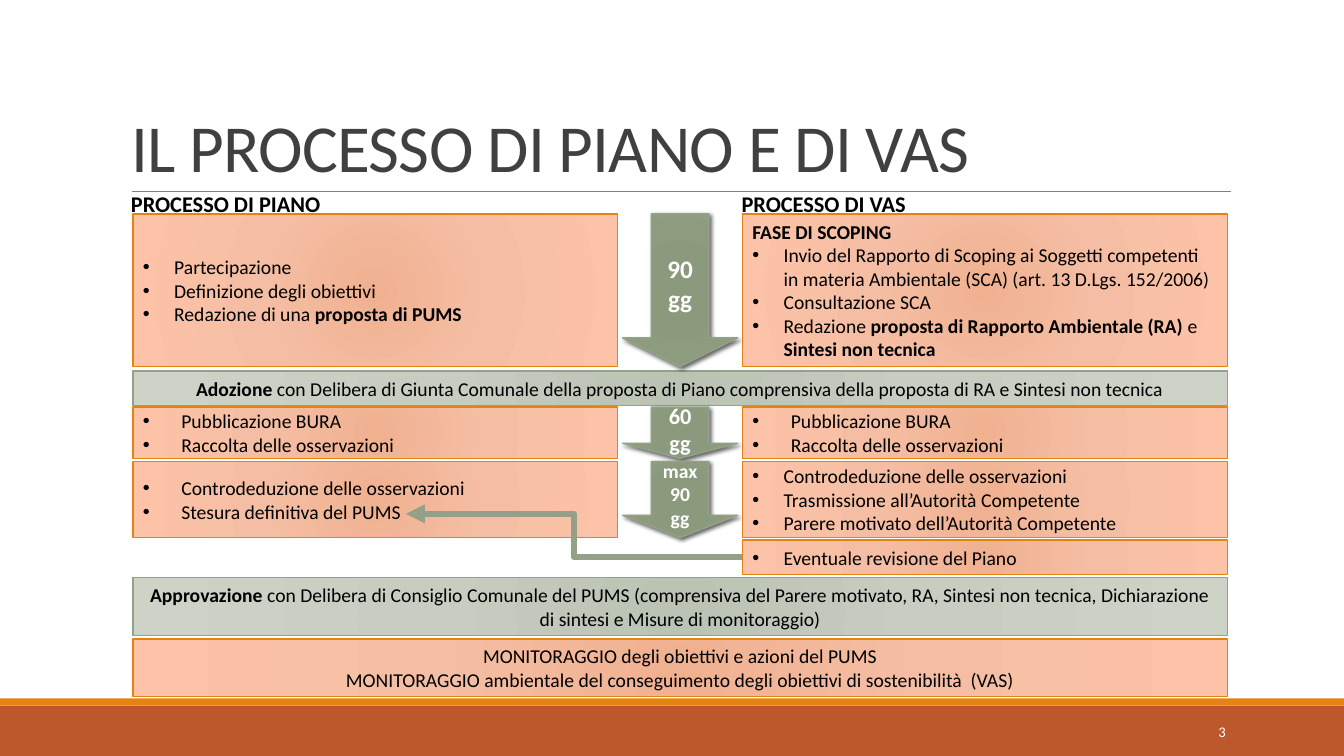
import dataclasses

import lxml.etree
import pptx
import pptx.dml.color
import pptx.enum.shapes
import pptx.enum.text
import pptx.oxml.ns
import pptx.util

Cm = pptx.util.Cm
Pt = pptx.util.Pt
ALIGN = pptx.enum.text.PP_ALIGN
ANCHOR = pptx.enum.text.MSO_ANCHOR
SHAPE = pptx.enum.shapes.MSO_SHAPE
qn = pptx.oxml.ns.qn


@dataclasses.dataclass(frozen=True)
class Theme:
    font: str = "Calibri"
    title_size: float = 48
    heading_size: float = 16
    body_size: float = 14
    number_size: float = 10.5
    title: str = "404040"
    text: str = "000000"
    light: str = "FFFFFF"
    rule: str = "808080"
    footer: str = "BD582C"
    orange: str = "E48312"
    green: str = "94A088"
    orange_stops: tuple = ((0, "F0B191"), (45, "F5BEA4"), (100, "FDC3A8"))
    green_stops: tuple = ((0, "BBC3B5"), (45, "C7CDC1"), (100, "CDD4C7"))
    arrow_stops: tuple = ((0, "8A987B"), (34, "8B997D"), (70, "8D9C7E"), (100, "94A187"))


THEME = Theme()

# All lengths are in centimetres; boxes are (left, top, width, height).
LEFT, WIDTH, COLUMN = 3.35, 27.58, 12.22
RIGHT = LEFT + WIDTH - COLUMN
ARROW_WIDTH = 2.9
SMALL_INDENT, LARGE_INDENT = 0.79, 0.97

# Each phase: top, height, arrow label, label size, arrow head, (indent, lines) per column.
PHASES = [
    (5.39, 3.85, "90\ngg", 18, 0.25,
     (SMALL_INDENT, ["• Partecipazione", "• Definizione degli obiettivi",
                     "• Redazione di una **proposta di PUMS**"]),
     (SMALL_INDENT, ["**FASE DI SCOPING**",
                     "• Invio del Rapporto di Scoping ai Soggetti competenti in materia "
                     "Ambientale (SCA) (art. 13 D.Lgs. 152/2006)",
                     "• Consultazione SCA",
                     "• Redazione **proposta di Rapporto Ambientale (RA) **e "
                     "**Sintesi non tecnica**"])),
    (10.26, 1.29, "60\ngg", 16, 0.294,
     (LARGE_INDENT, ["• Pubblicazione BURA", "• Raccolta delle osservazioni"]),
     (LARGE_INDENT, ["• Pubblicazione BURA", "• Raccolta delle osservazioni"])),
    (11.63, 1.92, "max\v90\ngg", 14, 0.294,
     (LARGE_INDENT, ["• Controdeduzione delle osservazioni", "• Stesura definitiva del PUMS"]),
     (SMALL_INDENT, ["• Controdeduzione delle osservazioni",
                     "• Trasmissione all’Autorità Competente",
                     "• Parere motivato dell’Autorità Competente"])),
]


def rgb(value):
    return pptx.dml.color.RGBColor.from_string(value)


def add_node(parent, tag, **attributes):
    node = lxml.etree.SubElement(parent, qn(tag))
    for name, value in attributes.items():
        node.set(name, str(value))
    return node


def style(paragraph, size, color, bold=None, align=ALIGN.LEFT):
    paragraph.alignment = align
    font = paragraph.font
    font.name, font.size, font.bold = THEME.font, Pt(size), bold
    font.color.rgb = rgb(color)


def fill_radial(shape, stops):
    shape.fill.gradient()
    gradient = shape._element.spPr.find(qn("a:gradFill"))
    for child in list(gradient):
        gradient.remove(child)
    stop_list = add_node(gradient, "a:gsLst")
    for position, color in stops:
        stop = add_node(stop_list, "a:gs", pos=position * 1000)
        add_node(stop, "a:srgbClr", val=color)
    radial = add_node(gradient, "a:path", path="circle")
    add_node(radial, "a:fillToRect", l=100000, t=100000, r=100000, b=100000)


def add_panel(slide, kind, box, stops, line):
    shape = slide.shapes.add_shape(kind, *map(Cm, box))
    shape.shadow.inherit = False
    fill_radial(shape, stops)
    shape.line.color.rgb = rgb(line)
    shape.line.width = Pt(1)
    return shape


def write_lines(frame, lines, indent, align):
    """Write lines; a leading • makes a bullet and ** toggles bold."""
    for index, line in enumerate(lines):
        paragraph = frame.paragraphs[0] if index == 0 else frame.add_paragraph()
        if line.startswith("• "):
            line = line[2:]
            properties = paragraph._p.get_or_add_pPr()
            properties.set("marL", str(Cm(indent)))
            properties.set("indent", str(-Cm(indent)))
            add_node(properties, "a:buFont", typeface="Arial")
            add_node(properties, "a:buChar", char="•")
        style(paragraph, THEME.body_size, THEME.text, align=align)
        for part, text in enumerate(line.split("**")):
            if text:
                run = paragraph.add_run()
                run.text = text
                run.font.bold = part % 2 == 1


def add_orange_box(slide, box, lines, indent=SMALL_INDENT, align=ALIGN.LEFT):
    shape = add_panel(slide, SHAPE.RECTANGLE, box, THEME.orange_stops, THEME.orange)
    shape.text_frame.vertical_anchor = ANCHOR.MIDDLE
    write_lines(shape.text_frame, lines, indent, align)


def add_green_band(slide, box, line):
    shape = add_panel(slide, SHAPE.RECTANGLE, box, THEME.green_stops, THEME.green)
    shape.text_frame.vertical_anchor = ANCHOR.MIDDLE
    write_lines(shape.text_frame, [line], 0, ALIGN.CENTER)


def add_duration_arrow(slide, box, label, size, head):
    arrow = add_panel(slide, SHAPE.DOWN_ARROW, box, THEME.arrow_stops, THEME.green)
    arrow.adjustments[0], arrow.adjustments[1] = 0.5, head
    effects = arrow._element.spPr.find(qn("a:effectLst"))
    shadow = add_node(effects, "a:outerShdw", blurRad=Pt(3), dist=Pt(2), dir=2700000)
    add_node(add_node(shadow, "a:srgbClr", val="000000"), "a:alpha", val=60000)
    arrow.text_frame.vertical_anchor = ANCHOR.MIDDLE
    arrow.text_frame.text = label
    for paragraph in arrow.text_frame.paragraphs:
        style(paragraph, size, THEME.light, True, ALIGN.CENTER)


def add_phase(slide, top, height, label, size, head, plan, assessment):
    for left, (indent, lines) in ((LEFT, plan), (RIGHT, assessment)):
        add_orange_box(slide, (left, top, COLUMN, height), lines, indent)
    arrow_left = (LEFT + COLUMN + RIGHT - ARROW_WIDTH) / 2
    add_duration_arrow(slide, (arrow_left, top, ARROW_WIDTH, height), label, size, head)


def add_line(slide, kind, start, end, color, width):
    line = slide.shapes.add_connector(kind, *map(Cm, start + end))
    line.line.color.rgb = rgb(color)
    line.line.width = Pt(width)
    add_node(line._element.spPr, "a:effectLst")
    return line


def add_label(slide, box, text, size, color, bold=None, align=ALIGN.LEFT, wrap=False):
    frame = slide.shapes.add_textbox(*map(Cm, box)).text_frame
    frame.word_wrap = wrap
    frame.vertical_anchor = ANCHOR.MIDDLE
    frame.text = text
    style(frame.paragraphs[0], size, color, bold, align)


def add_title(slide, box, text):
    title = slide.shapes.title
    title.left, title.top, title.width, title.height = map(Cm, box)
    frame = title.text_frame
    frame.text = text
    frame.auto_size = pptx.enum.text.MSO_AUTO_SIZE.NONE
    frame.vertical_anchor = ANCHOR.BOTTOM
    paragraph = frame.paragraphs[0]
    paragraph.line_spacing = 0.85
    style(paragraph, THEME.title_size, THEME.title)
    paragraph.runs[0]._r.get_or_add_rPr().set("spc", "-50")
    add_line(slide, pptx.enum.shapes.MSO_CONNECTOR.STRAIGHT,
             (3.33, 4.83), (31.01, 4.83), THEME.rule, 0.5)


def add_footer(slide, box, number):
    left, top, width, height = box
    stripe = 0.18
    for bar_top, bar_height, color in ((top + stripe, height - stripe, THEME.footer),
                                       (top, stripe, THEME.orange)):
        bar = slide.shapes.add_shape(SHAPE.RECTANGLE, *map(Cm, (left, bar_top, width, bar_height)))
        bar.shadow.inherit = False
        bar.fill.solid()
        bar.fill.fore_color.rgb = rgb(color)
        bar.line.fill.background()
    add_label(slide, (left + 27.51, top + 0.33, 3.63, 1.02), number,
              THEME.number_size, THEME.light, align=ALIGN.RIGHT, wrap=True)


def add_revision(slide, box):
    """Place the plan revision box and the arrow leading back to the plan."""
    add_orange_box(slide, box, ["• Eventuale revisione del Piano"])
    left, top, _, height = box
    arrow = add_line(slide, pptx.enum.shapes.MSO_CONNECTOR.ELBOW,
                     (left, top + height / 2), (left - 8.48, top - 0.66), THEME.green, 4.5)
    add_node(arrow.line._get_or_add_ln(), "a:tailEnd", type="triangle")


def main():
    presentation = pptx.Presentation()
    presentation.slide_width, presentation.slide_height = Cm(33.87), Cm(19.05)
    slide = presentation.slides.add_slide(presentation.slide_layouts[5])
    add_footer(slide, (0, 17.6, 33.87, 1.45), "3")
    add_title(slide, (3.05, 0.79, 27.94, 4.04), "IL PROCESSO DI PIANO E DI VAS")
    for left, width, heading in ((3.05, 5.36, "PROCESSO DI PIANO"),
                                 (18.44, 4.72, "PROCESSO DI VAS")):
        add_label(slide, (left, 4.65, width, 0.94), heading,
                  THEME.heading_size, THEME.text, True)
    add_green_band(slide, (LEFT, 9.35, WIDTH, 0.87),
                   "**Adozione** con Delibera di Giunta Comunale della proposta di Piano "
                   "comprensiva della proposta di RA e Sintesi non tecnica")
    for phase in PHASES:
        add_phase(slide, *phase)
    add_revision(slide, (RIGHT, 13.61, COLUMN, 0.87))
    add_green_band(slide, (LEFT, 14.56, WIDTH, 1.46),
                   "**Approvazione** con Delibera di Consiglio Comunale del PUMS (comprensiva "
                   "del Parere motivato, RA, Sintesi non tecnica, Dichiarazione di sintesi e "
                   "Misure di monitoraggio)")
    add_orange_box(slide, (LEFT, 16.1, WIDTH, 1.46),
                   ["MONITORAGGIO degli obiettivi e azioni del PUMS",
                    "MONITORAGGIO ambientale del conseguimento degli obiettivi di "
                    "sostenibilità  (VAS)"], align=ALIGN.CENTER)
    presentation.save("out.pptx")


if __name__ == "__main__":
    main()
